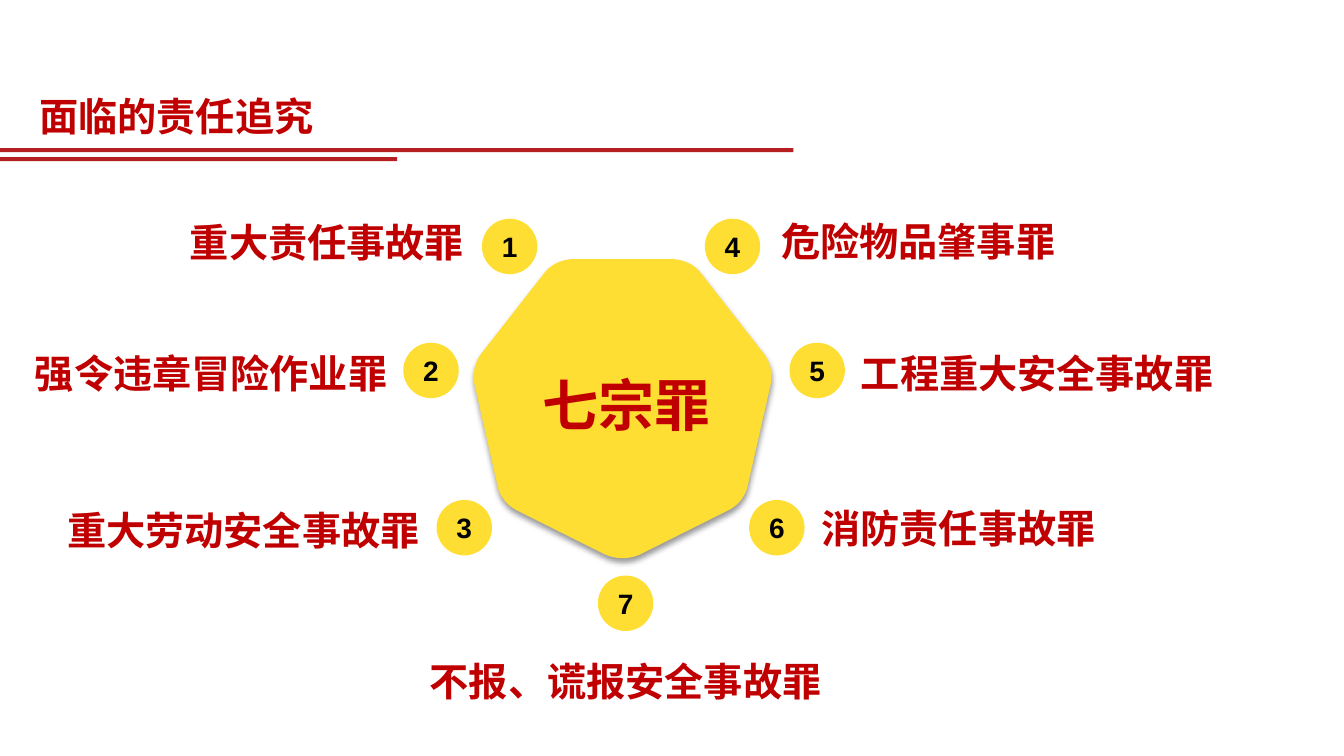
from dataclasses import dataclass

import pptx
import pptx.dml.color
import pptx.enum.shapes
import pptx.enum.text
import pptx.oxml
import pptx.oxml.ns
import pptx.util

PX = 9144
ALIGN = pptx.enum.text.PP_ALIGN
ANCHOR = pptx.enum.text.MSO_ANCHOR
SHAPE = pptx.enum.shapes.MSO_SHAPE
RGB = pptx.dml.color.RGBColor


@dataclass(frozen=True)
class Theme:
    font: str = "Arial"
    crimson: RGB = RGB(0xC0, 0x00, 0x00)
    rule: RGB = RGB(0xB6, 0x1F, 0x22)
    yellow: RGB = RGB(0xFF, 0xDE, 0x33)
    black: RGB = RGB(0x00, 0x00, 0x00)
    core_size: int = 40
    label_size: int = 28
    badge_size: int = 20


THEME = Theme()
BADGE = 55
LABEL_HEIGHT = 73
MIRROR_SUM = 1235

CRIMES = [
    ("1", "重大责任事故罪", (478, 217), (52, 188, 418), ALIGN.RIGHT),
    ("2", "强令违章冒险作业罪", (400, 340), (0, 318, 394), ALIGN.RIGHT),
    ("3", "重大劳动安全事故罪", (433, 496), (0, 474, 426), ALIGN.RIGHT),
    ("4", "危险物品肇事罪", (699, 217), (765, 187, 468), ALIGN.LEFT),
    ("5", "工程重大安全事故罪", (783, 340), (844, 318, 468), ALIGN.LEFT),
    ("6", "消防责任事故罪", (743, 496), (805, 472, 430), ALIGN.LEFT),
    ("7", "不报、谎报安全事故罪", (593, 571), (285, 624, 671), ALIGN.CENTER),
]

RIGHT_CORNERS = [
    [(665, 257), (677, 257), (689, 262), (696, 272)],
    [(757, 350), (764, 359), (767, 371), (764, 383)],
    [(742, 480), (740, 492), (732, 502), (721, 507)],
]
BOTTOM_CORNER = [(635, 550), (624, 555), (611, 555), (600, 550)]


def emu(*lengths):
    return [pptx.util.Emu(round(length * PX)) for length in lengths]


def apply(target, values):
    for name, value in values.items():
        setattr(target, name, value)


def write(shape, text, size, color, align, anchor=ANCHOR.TOP, spacing=1.0):
    frame = shape.text_frame
    apply(frame, {
        "text": text,
        "word_wrap": True,
        "auto_size": pptx.enum.text.MSO_AUTO_SIZE.NONE,
        "vertical_anchor": anchor,
    })
    paragraph = frame.paragraphs[0]
    apply(paragraph, {"alignment": align, "line_spacing": spacing})
    font = paragraph.runs[0].font
    apply(font, {"name": THEME.font, "size": pptx.util.Pt(size), "bold": True})
    font.color.rgb = color


def paint(shape, color):
    shape.shadow.inherit = False
    shape.fill.solid()
    shape.fill.fore_color.rgb = color
    shape.line.fill.background()


def add_title(slide, text):
    title = slide.shapes.title
    apply(title, dict(zip(("left", "top", "width", "height"), emu(29, 87, 1197, 57))))
    write(title, text, THEME.label_size, THEME.crimson, ALIGN.LEFT)


def add_rule(slide, top, width):
    rule = slide.shapes.add_shape(SHAPE.RECTANGLE, *emu(0, top, width, 4))
    paint(rule, THEME.rule)


def add_label(slide, text, box, size, align):
    label = slide.shapes.add_textbox(*emu(*box))
    write(label, text, size, THEME.crimson, align, spacing=1.5)


def add_badge(slide, number, left, top):
    badge = slide.shapes.add_shape(SHAPE.OVAL, *emu(left, top, BADGE, BADGE))
    paint(badge, THEME.yellow)
    apply(badge.text_frame, dict.fromkeys(
        ("margin_left", "margin_right", "margin_top", "margin_bottom"), 0))
    write(badge, number, THEME.badge_size, THEME.black, ALIGN.CENTER, ANCHOR.MIDDLE)


def curve(corner, steps=12):
    for step in range(steps + 1):
        t = step / steps
        weights = ((1 - t) ** 3, 3 * t * (1 - t) ** 2, 3 * t * t * (1 - t), t ** 3)
        yield tuple(sum(w * point[axis] for w, point in zip(weights, corner))
                    for axis in (0, 1))


def add_heptagon(slide):
    left_corners = [[(MIRROR_SUM - x, y) for x, y in reversed(corner)]
                    for corner in reversed(RIGHT_CORNERS)]
    corners = RIGHT_CORNERS + [BOTTOM_CORNER] + left_corners
    outline = [emu(*point) for corner in corners for point in curve(corner)]
    builder = slide.shapes.build_freeform(*outline[0])
    builder.add_line_segments(outline[1:], close=True)
    heptagon = builder.convert_to_shape()
    paint(heptagon, THEME.yellow)
    effects = heptagon.fill._xPr.find(pptx.oxml.ns.qn("a:effectLst"))
    effects.append(pptx.oxml.parse_xml(
        f'<a:outerShdw {pptx.oxml.ns.nsdecls("a")} blurRad="50800" dist="38100" '
        'dir="5400000" rotWithShape="0"><a:srgbClr val="000000">'
        '<a:alpha val="40000"/></a:srgbClr></a:outerShdw>'))


def main():
    deck = pptx.Presentation()
    deck.slide_width, deck.slide_height = emu(1333, 750)
    slide = deck.slides.add_slide(deck.slide_layouts.get_by_name("Title Only"))
    add_rule(slide, 147, 787)
    add_rule(slide, 156, 394)
    add_title(slide, "面临的责任追究")
    add_heptagon(slide)
    add_label(slide, "七宗罪", (509, 329, 224, 100), THEME.core_size, ALIGN.CENTER)
    for number, crime, badge_at, label_at, align in CRIMES:
        add_badge(slide, number, *badge_at)
        add_label(slide, crime, (*label_at, LABEL_HEIGHT), THEME.label_size, align)
    deck.save("out.pptx")


if __name__ == "__main__":
    main()
